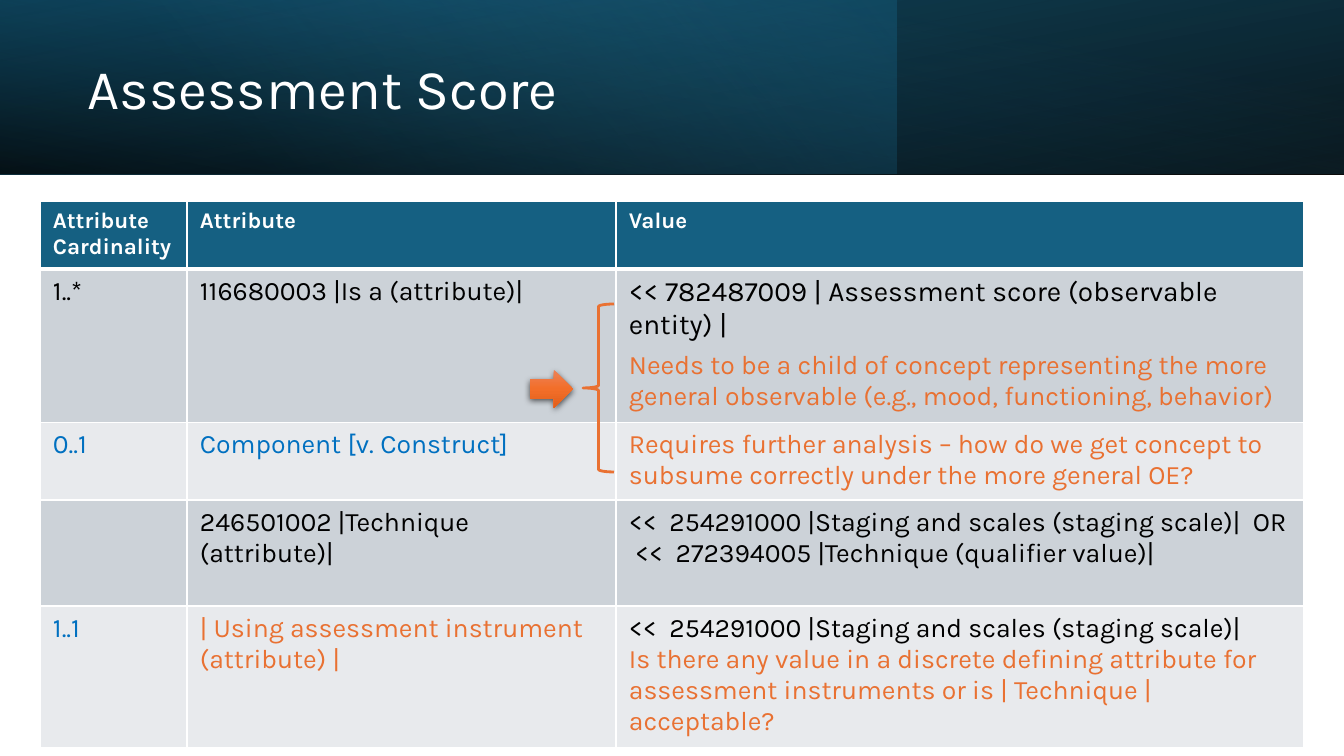
"""Build the Assessment Score slide: a gradient banner, an attribute table and a marked pair of rows."""
from lxml.etree import SubElement
from pptx import Presentation
from pptx.dml.color import RGBColor
from pptx.enum.shapes import MSO_SHAPE as Shape
from pptx.enum.text import MSO_ANCHOR as Anchor
from pptx.oxml.ns import qn
from pptx.util import Pt

PX = 12192000 / 1344
FONT = "Karla"
WHITE = RGBColor(0xFF, 0xFF, 0xFF)
BLACK = RGBColor(0x00, 0x00, 0x00)
TEAL = RGBColor(0x15, 0x60, 0x82)
DEEP_TEAL = RGBColor(0x10, 0x48, 0x62)
SKY = RGBColor(0x46, 0xB1, 0xE1)
BLUE = RGBColor(0x00, 0x70, 0xC0)
ORANGE = RGBColor(0xE9, 0x71, 0x32)
ORANGE_TOP = RGBColor(0xED, 0x82, 0x57)
ORANGE_MIDDLE = RGBColor(0xF2, 0x6E, 0x29)
ORANGE_BOTTOM = RGBColor(0xE2, 0x5F, 0x1A)
GREY = RGBColor(0xCC, 0xD2, 0xD8)
PALE_GREY = RGBColor(0xE8, 0xEA, 0xED)


def add_gradient_shape(kind, box, angle, stops):
    shape = slide.shapes.add_shape(kind, *[round(value * PX) for value in box])
    shape.shadow.inherit = False
    shape.line.fill.background()
    shape.fill.gradient()
    gradient = shape.element.spPr.find(qn("a:gradFill"))
    for child in list(gradient):
        gradient.remove(child)
    stop_list = SubElement(gradient, qn("a:gsLst"))
    for position, color, opacity in stops:
        stop = SubElement(stop_list, qn("a:gs"), pos=str(position * 1000))
        fill = SubElement(stop, qn("a:srgbClr"), val=str(color))
        SubElement(fill, qn("a:alpha"), val=str(opacity * 1000))
    SubElement(gradient, qn("a:lin"), ang=str(angle * 60000), scaled="0")
    return shape


def add_run(paragraph, text, size, color, bold=False):
    run = paragraph.add_run()
    run.text = text
    run.font.name = FONT
    run.font.size = Pt(size)
    run.font.bold = bold
    run.font.color.rgb = color


presentation = Presentation()
presentation.slide_width = round(1344 * PX)
presentation.slide_height = round(756 * PX)
slide = presentation.slides.add_slide(presentation.slide_layouts[6])

banner = add_gradient_shape(Shape.RECTANGLE, (0, 0, 1344, 174), 100,
                            [(0, BLACK, 96), (100, DEEP_TEAL, 100)])
banner.rotation = 180
add_gradient_shape(Shape.RECTANGLE, (0, 0, 897, 174), 140,
                   [(0, TEAL, 41), (74, SKY, 0)])
shade = add_gradient_shape(Shape.RECTANGLE, (0, 0, 1344, 174), 260,
                           [(0, BLACK, 63), (78, TEAL, 15)])
for flipped in (banner, shade):
    flipped.element.spPr.find(qn("a:xfrm")).set("flipH", "1")

title = slide.shapes.add_textbox(*[round(value * PX) for value in (78, 27, 778, 128)])
title.text_frame.word_wrap = True
title.text_frame.vertical_anchor = Anchor.MIDDLE
title_paragraph = title.text_frame.paragraphs[0]
title_paragraph.line_spacing = 0.9
add_run(title_paragraph, "Assessment Score", 40, WHITE)

ROWS = [
    (65, TEAL, [[("Attribute Cardinality", 16, WHITE)],
                [("Attribute", 16, WHITE)],
                [("Value", 16, WHITE)]]),
    (150, GREY, [[("1..*", 19, BLACK)],
                 [("116680003 |Is a (attribute)|", 19, BLACK)],
                 [("<< 782487009 | Assessment score (observable entity) |", 20, BLACK),
                  ("Needs to be a child of concept representing the more general observable "
                   "(e.g., mood, functioning, behavior)", 19, ORANGE)]]),
    (76, PALE_GREY, [[("0..1", 19, BLUE)],
                     [("Component [v. Construct]", 19, BLUE)],
                     [("Requires further analysis – how do we get concept to subsume correctly "
                       "under the more general OE?", 19, ORANGE)]]),
    (106, GREY, [[],
                 [("246501002 |Technique (attribute)|", 19, BLACK)],
                 [("<<  254291000 |Staging and scales (staging scale)|  OR", 19, BLACK),
                  (" <<  272394005 |Technique (qualifier value)|", 19, BLACK)]]),
    (138, PALE_GREY, [[("1..1", 19, BLUE)],
                      [("| Using assessment instrument (attribute) |", 19, ORANGE)],
                      [("<<  254291000 |Staging and scales (staging scale)|", 19, BLACK),
                       ("Is there any value in a discrete defining attribute for assessment "
                        "instruments or is | Technique | acceptable?", 19, ORANGE)]]),
]
COLUMN_WIDTHS = (147, 429, 688)
table_height = sum(height for height, _, _ in ROWS)
table_box = (40, 201, sum(COLUMN_WIDTHS), table_height)
table = slide.shapes.add_table(len(ROWS), len(COLUMN_WIDTHS),
                               *[round(value * PX) for value in table_box]).table
for column, width in zip(table.columns, COLUMN_WIDTHS):
    column.width = round(width * PX)

for row_index, (height, fill_color, row_texts) in enumerate(ROWS):
    table.rows[row_index].height = round(height * PX)
    for column_index, lines in enumerate(row_texts):
        cell = table.cell(row_index, column_index)
        cell.margin_left = cell.margin_right = round(13 * PX)
        cell.margin_top = cell.margin_bottom = round(7 * PX)
        cell.fill.solid()
        cell.fill.fore_color.rgb = fill_color
        properties = cell._tc.get_or_add_tcPr()
        for side_index, side in enumerate(("lnL", "lnR", "lnT", "lnB")):
            thick = (row_index, side) in ((0, "lnB"), (1, "lnT"))
            border = SubElement(properties, qn(f"a:{side}"), w=str(Pt(3 if thick else 1)))
            border_fill = SubElement(border, qn("a:solidFill"))
            SubElement(border_fill, qn("a:srgbClr"), val=str(WHITE))
            properties.insert(side_index, border)
        for line_index, (text, size, color) in enumerate(lines):
            frame = cell.text_frame
            paragraph = frame.add_paragraph() if line_index else frame.paragraphs[0]
            add_run(paragraph, text, size, color, bold=row_index == 0)
table.cell(1, 2).text_frame.paragraphs[1].space_before = Pt(6)

arrow = add_gradient_shape(Shape.RIGHT_ARROW, (530, 370, 43, 38), 90,
                           [(0, ORANGE_TOP, 100), (50, ORANGE_MIDDLE, 100),
                            (100, ORANGE_BOTTOM, 100)])
effects = arrow.element.spPr.find(qn("a:effectLst"))
shadow = SubElement(effects, qn("a:outerShdw"), blurRad=str(Pt(4.5)), dist=str(Pt(1.5)),
                    dir=str(90 * 60000), algn="ctr", rotWithShape="0")
shadow_color = SubElement(shadow, qn("a:srgbClr"), val=str(BLACK))
SubElement(shadow_color, qn("a:alpha"), val="63000")

brace = slide.shapes.add_shape(Shape.LEFT_BRACE,
                               *[round(value * PX) for value in (583, 304, 31, 168)])
brace.shadow.inherit = False
brace.fill.background()
brace.line.color.rgb = ORANGE
brace.line.width = Pt(2)

presentation.save("out.pptx")
